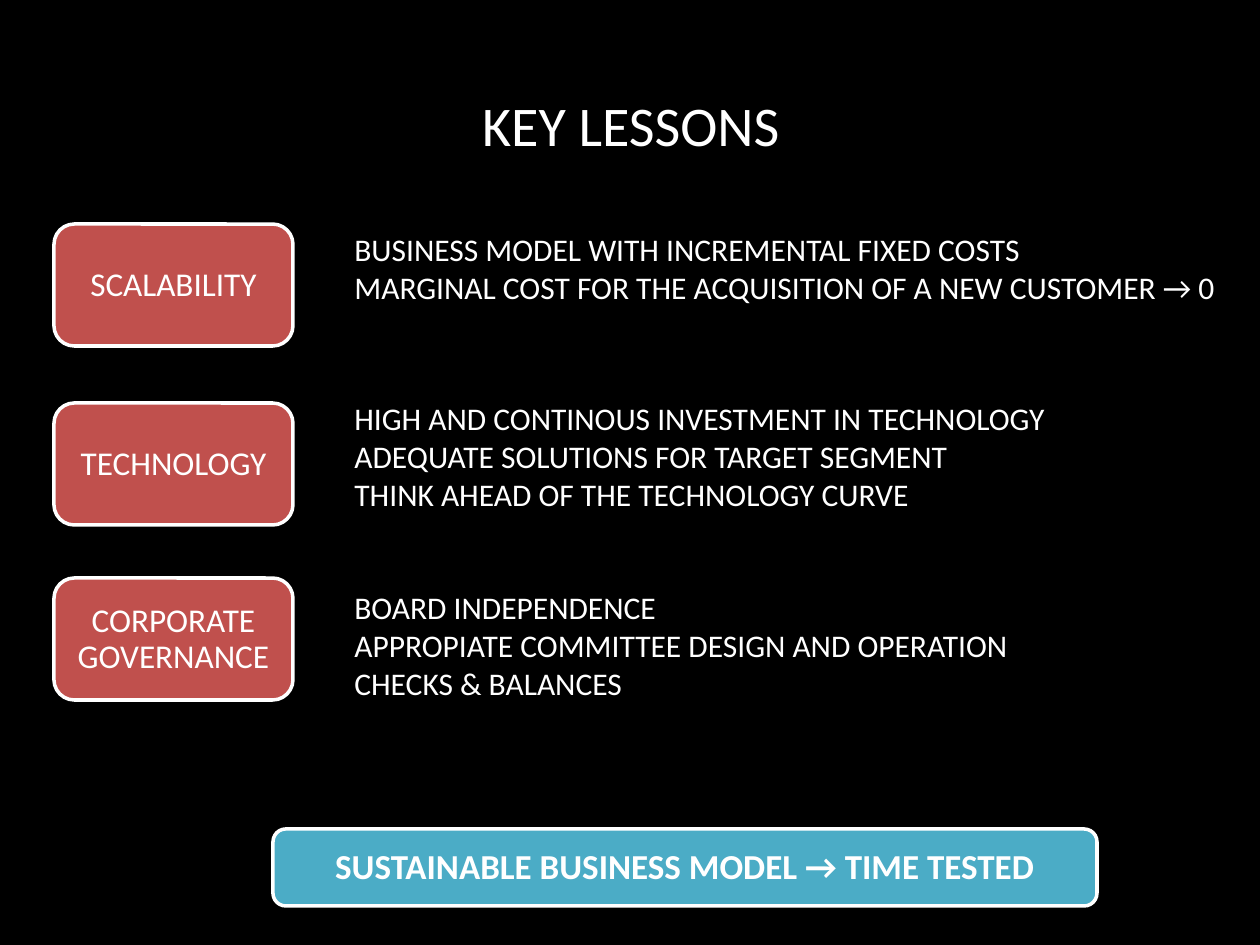
from pptx import Presentation
from pptx.dml.color import RGBColor
from pptx.enum.shapes import MSO_SHAPE
from pptx.enum.text import MSO_ANCHOR, PP_ALIGN
from pptx.util import Inches, Pt

PX = Inches(10) / 1260
BLACK = RGBColor(0x00, 0x00, 0x00)
WHITE = RGBColor(0xFF, 0xFF, 0xFF)
RED = RGBColor(0xC0, 0x50, 0x4D)
TEAL = RGBColor(0x4B, 0xAC, 0xC6)


def write(shape, lines, size, bold=False, **form):
    """Fill the shape's text frame, one paragraph a line."""
    frame = shape.text_frame
    frame.text = "\n".join(lines)
    frame.word_wrap = form.pop("wrap", True)
    frame.vertical_anchor = form.pop("anchor", MSO_ANCHOR.MIDDLE)
    font = {"name": "Calibri", "size": Pt(size), "bold": bold}
    for para in frame.paragraphs:
        for key, val in form.items():
            setattr(para, key, val)
        for key, val in font.items():
            setattr(para.runs[0].font, key, val)
        para.runs[0].font.color.rgb = WHITE


def card(box, fill, text, size, bold=False):
    """Add a round box with a white edge and centred text."""
    shape = slide.shapes.add_shape(
        MSO_SHAPE.ROUNDED_RECTANGLE, *[int(n * PX) for n in box])
    shape.shadow.inherit = False
    shape.fill.solid()
    shape.fill.fore_color.rgb = fill
    shape.line.color.rgb = WHITE
    shape.line.width = Pt(2)
    pads = {"margin_left": 8, "margin_right": 8,
            "margin_top": 6, "margin_bottom": 4}
    for key, val in pads.items():
        setattr(shape.text_frame, key, int(val * PX))
    write(shape, [text], size, bold, alignment=PP_ALIGN.CENTER,
          line_spacing=0.9)


deck = Presentation()
deck.slide_width = int(1260 * PX)
deck.slide_height = int(945 * PX)
slide = deck.slides.add_slide(deck.slide_layouts[6])
slide.background.fill.solid()
slide.background.fill.fore_color.rgb = BLACK

title = slide.shapes.add_textbox(*[int(n * PX) for n in (64, 45, 1134, 158)])
write(title, ["KEY LESSONS"], 32, alignment=PP_ALIGN.CENTER)

card((273, 829, 824, 77), TEAL, "SUSTAINABLE BUSINESS MODEL → TIME TESTED",
     20, True)

# card top, card text, notes top, notes width, notes
ROWS = [
    (224, "SCALABILITY", 224, 900, [
        "BUSINESS MODEL WITH INCREMENTAL FIXED COSTS",
        "MARGINAL COST FOR THE ACQUISITION OF A NEW CUSTOMER → 0"]),
    (403, "TECHNOLOGY", 393, 726, [
        "HIGH AND CONTINOUS INVESTMENT IN TECHNOLOGY",
        "ADEQUATE SOLUTIONS FOR TARGET SEGMENT",
        "THINK AHEAD OF THE TECHNOLOGY CURVE"]),
    (578, "CORPORATE GOVERNANCE", 582, 690, [
        "BOARD INDEPENDENCE",
        "APPROPIATE COMMITTEE DESIGN AND OPERATION",
        "CHECKS & BALANCES"]),
]
for top, name, y, wide, lines in ROWS:
    card((54, top, 239, 122), RED, name, 19)
    notes = slide.shapes.add_textbox(
        *[int(n * PX) for n in (342, y, wide, 127)])
    write(notes, lines, 18, wrap=False, anchor=MSO_ANCHOR.TOP,
          alignment=PP_ALIGN.LEFT)

deck.save("out.pptx")
